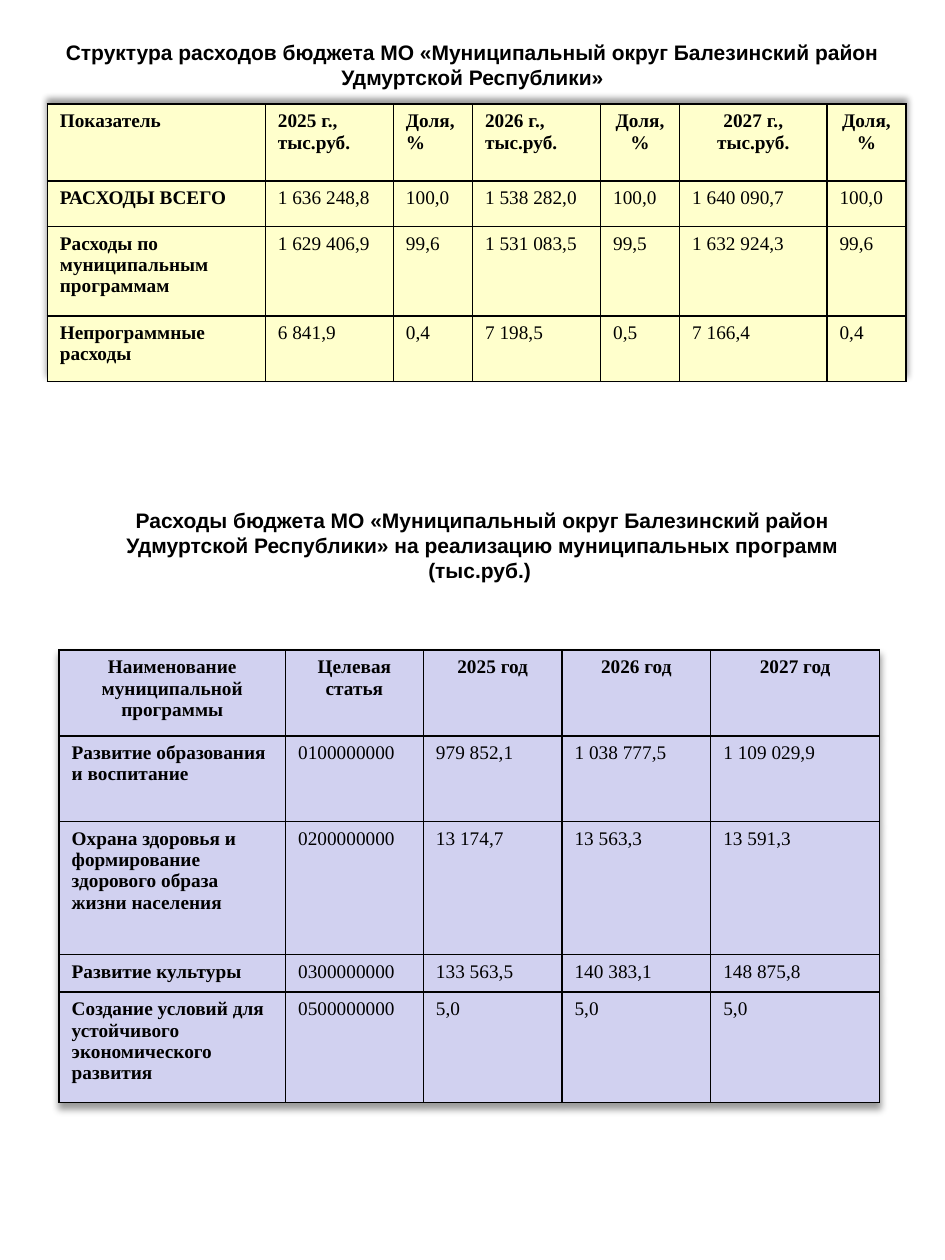
from lxml.etree import SubElement, fromstring
from pptx import Presentation
from pptx.dml.color import RGBColor
from pptx.enum.text import MSO_ANCHOR as Anchor, PP_ALIGN as Align
from pptx.oxml.ns import qn
from pptx.util import Pt

COLORS = {"ink": "000000", "structure": "FFFFCC", "programs": "D1D1F0"}
DRAWING_NS = "http://schemas.openxmlformats.org/drawingml/2006/main"
UP, DOWN = 16200000, 5400000

STRUCTURE = [
    ["Показатель", "2025 г., тыс.руб.", "Доля,%", "2026 г., тыс.руб.", "Доля,%", "2027 г., тыс.руб.", "Доля,%"],
    ["РАСХОДЫ ВСЕГО", "1 636 248,8", "100,0", "1 538 282,0", "100,0", "1 640 090,7", "100,0"],
    ["Расходы по муниципальным программам", "1 629 406,9", "99,6", "1 531 083,5", "99,5", "1 632 924,3", "99,6"],
    ["Непрограммные расходы", "6 841,9", "0,4", "7 198,5", "0,5", "7 166,4", "0,4"],
]
PROGRAMS = [
    ["Наименование муниципальной программы", "Целевая статья", "2025 год", "2026 год", "2027 год"],
    ["Развитие образования и воспитание", "0100000000", "979 852,1", "1 038 777,5", "1 109 029,9"],
    ["Охрана здоровья и формирование здорового образа жизни населения", "0200000000",
     "13 174,7", "13 563,3", "13 591,3"],
    ["Развитие культуры", "0300000000", "133 563,5", "140 383,1", "148 875,8"],
    ["Создание условий для устойчивого экономического развития", "0500000000", "5,0", "5,0", "5,0"],
]


def write(frame, text, font="Times New Roman", size=11, bold=False, align=Align.LEFT):
    paragraph = frame.paragraphs[0]
    paragraph.alignment = align
    run = paragraph.add_run()
    run.text = text
    run.font.name = font
    run.font.size = Pt(size)
    run.font.bold = bold
    run.font.color.rgb = RGBColor.from_string(COLORS["ink"])


class BudgetSlide:
    """Draws headings and ruled tables on one slide."""

    def __init__(self, slide):
        self.slide = slide

    def heading(self, text, left, top, width, height, anchor=Anchor.TOP):
        box = self.slide.shapes.add_textbox(Pt(left), Pt(top), Pt(width), Pt(height))
        frame = box.text_frame
        frame.word_wrap = True
        frame.vertical_anchor = anchor
        write(frame, text, font="Arial", size=12, bold=True, align=Align.CENTER)

    def border(self, cell):
        properties = cell._tc.get_or_add_tcPr()
        for position, side in enumerate(("lnL", "lnR", "lnT", "lnB")):
            properties.insert(position, fromstring(
                f'<a:{side} xmlns:a="{DRAWING_NS}" w="{Pt(1)}"><a:solidFill>'
                f'<a:srgbClr val="{COLORS["ink"]}"/></a:solidFill></a:{side}>'))

    def shadow(self, table, direction):
        effects = SubElement(table._tbl.tblPr, qn("a:effectLst"))
        table._tbl.tblPr.insert(0, effects)
        effects.append(fromstring(
            f'<a:outerShdw xmlns:a="{DRAWING_NS}" blurRad="{Pt(4)}" dist="{Pt(3)}" dir="{direction}">'
            f'<a:srgbClr val="{COLORS["ink"]}"><a:alpha val="40000"/></a:srgbClr></a:outerShdw>'))

    def table(self, rows, left, top, widths, heights, fill, centered_from, shadow):
        table = self.slide.shapes.add_table(
            len(rows), len(widths), Pt(left), Pt(top), Pt(sum(widths)), Pt(sum(heights))).table
        for column, width in zip(table.columns, widths):
            column.width = Pt(width)
        for row, height in zip(table.rows, heights):
            row.height = Pt(height)
        for r, values in enumerate(rows):
            for c, value in enumerate(values):
                cell = table.cell(r, c)
                cell.fill.solid()
                cell.fill.fore_color.rgb = RGBColor.from_string(COLORS[fill])
                self.border(cell)
                centered = r == 0 and c >= centered_from
                write(cell.text_frame, value, bold=r == 0 or c == 0,
                      align=Align.CENTER if centered else Align.LEFT)
        self.shadow(table, shadow)


def main():
    deck = Presentation()
    deck.slide_width, deck.slide_height = Pt(540), Pt(720)
    budget = BudgetSlide(deck.slides.add_slide(deck.slide_layouts[6]))
    budget.heading("Структура расходов бюджета МО «Муниципальный округ Балезинский район "
                   "Удмуртской Республики»", 27, 20, 486, 34, anchor=Anchor.MIDDLE)
    budget.table(STRUCTURE, 27, 59.5, [124.6, 73.2, 45.2, 73.2, 45.2, 84.2, 45.2],
                 [44, 26, 51, 37.5], "structure", centered_from=4, shadow=UP)
    budget.heading("Расходы бюджета МО «Муниципальный округ Балезинский район Удмуртской Республики» "
                   "на реализацию муниципальных программ (тыс.руб.) ", 39.5, 286.5, 472.5, 51)
    budget.table(PROGRAMS, 33.8, 371.5, [129.4, 78.8, 79.2, 85, 96.5],
                 [49, 49, 76, 21.5, 63], "programs", centered_from=0, shadow=DOWN)
    deck.save("out.pptx")


if __name__ == "__main__":
    main()
